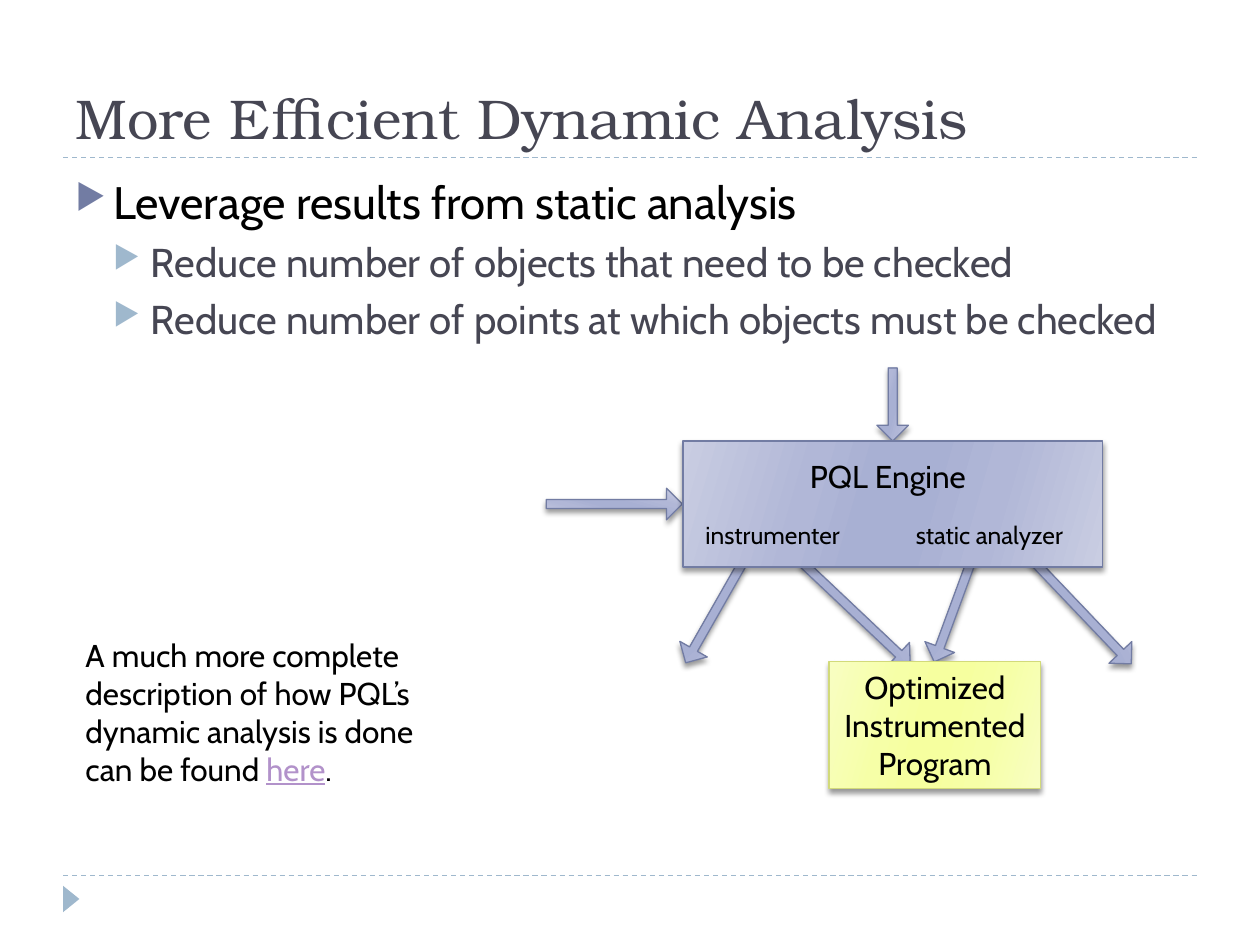
"""Build the slide on more efficient dynamic analysis with the PQL engine diagram."""
import pptx
import pptx.dml.color
import pptx.enum.dml
import pptx.enum.shapes
import pptx.enum.text
import pptx.oxml
import pptx.oxml.ns
import pptx.util

PX = 9144
COLORS = {
    "ink": "000000", "slate": "464653", "indigo": "727CA3",
    "sky": "9FB8CD", "olive": "D2DA7A", "link": "B292CA",
}
BLUES = ["C9CDE2", "B1B7D7", "A8B0D3"]
YELLOWS = ["F8FEC2", "F6FFA7", "F6FF9F"]
KINDS = pptx.enum.shapes.MSO_SHAPE
ALIGN = pptx.enum.text.PP_ALIGN
NAMESPACE = pptx.oxml.ns.nsdecls("a")


def add_span(para, text, size, color="ink", font="Cabin"):
    span = para.add_run()
    span.text = text
    span.font.size = pptx.util.Pt(size)
    span.font.name = font
    span.font.color.rgb = pptx.dml.color.RGBColor.from_string(COLORS[color])
    return span


def add_block(kind, bounds, shades, edge):
    block = page.shapes.add_shape(kind, *[value * PX for value in bounds])
    block.line.color.rgb = pptx.dml.color.RGBColor.from_string(COLORS[edge])
    block.line.width = pptx.util.Pt(0.75)
    block.fill.solid()
    stops = "".join(
        f'<a:gs pos="{position * 1000}"><a:srgbClr val="{shade}"/></a:gs>'
        for position, shade in zip((0, 30, 45, 55, 73, 100), shades + shades[::-1])
    )
    solid = block.fill._xPr.find(pptx.oxml.ns.qn("a:solidFill"))
    solid.getparent().replace(solid, pptx.oxml.parse_xml(
        f'<a:gradFill {NAMESPACE} rotWithShape="1"><a:gsLst>{stops}</a:gsLst>'
        '<a:lin ang="960000" scaled="0"/></a:gradFill>'))
    block.shadow.inherit = False
    block._element.spPr.find(pptx.oxml.ns.qn("a:effectLst")).append(pptx.oxml.parse_xml(
        f'<a:outerShdw {NAMESPACE} blurRad="38100" dist="25400" dir="5400000" rotWithShape="0">'
        '<a:srgbClr val="000000"><a:alpha val="40000"/></a:srgbClr></a:outerShdw>'))
    return block


deck = pptx.Presentation()
deck.slide_width, deck.slide_height = 1000 * PX, 750 * PX
page = deck.slides.add_slide(deck.slide_layouts[5])

for height in (695, 125):
    rule = page.shapes.add_connector(
        pptx.enum.shapes.MSO_CONNECTOR.STRAIGHT, 50 * PX, height * PX, 950 * PX, height * PX)
    rule.line.color.rgb = pptx.dml.color.RGBColor.from_string(COLORS["sky"])
    rule.line.width = pptx.util.Pt(0.75)
    rule.line.dash_style = pptx.enum.dml.MSO_LINE.DASH
    rule._element.spPr.append(pptx.oxml.parse_xml(f"<a:effectLst {NAMESPACE}/>"))

marker = page.shapes.add_shape(KINDS.ISOSCELES_TRIANGLE, 46 * PX, 707 * PX, 21 * PX, 13 * PX)
marker.rotation = 90
marker.shadow.inherit = False
marker.fill.solid()
marker.fill.fore_color.rgb = pptx.dml.color.RGBColor.from_string(COLORS["sky"])
marker.line.fill.background()

title = page.shapes.title
title.left, title.top, title.width, title.height = 50 * PX, 17 * PX, 900 * PX, 108 * PX
title.text_frame.auto_size = pptx.enum.text.MSO_AUTO_SIZE.NONE
title.text_frame.vertical_anchor = pptx.enum.text.MSO_ANCHOR.BOTTOM
para = title.text_frame.paragraphs[0]
para.alignment = ALIGN.LEFT
add_span(para, "More Efficient Dynamic Analysis", 32, "slate", "TeX Gyre Bonum")

body = page.shapes.add_textbox(50 * PX, 133 * PX, 900 * PX, 200 * PX)
body.text_frame.word_wrap = True
points = [
    (0, "Leverage results from static analysis"),
    (1, "Reduce number of objects that need to be checked"),
    (1, "Reduce number of points at which objects must be checked"),
]
levels = [(26, "ink", "indigo", 6), (23, "slate", "sky", 5)]
for index, (level, text) in enumerate(points):
    size, color, bullet, space = levels[level]
    para = body.text_frame.add_paragraph() if index else body.text_frame.paragraphs[0]
    para.level = level
    para.space_before = pptx.util.Pt(space)
    add_span(para, text, size, color)
    settings = para._p.get_or_add_pPr()
    settings.set("marL", str((level + 1) * 30 * PX))
    settings.set("indent", str(-30 * PX))
    for markup in (
        f'<a:buClr {NAMESPACE}><a:srgbClr val="{COLORS[bullet]}"/></a:buClr>',
        f'<a:buSzPct {NAMESPACE} val="76000"/>',
        f'<a:buChar {NAMESPACE} char="▶"/>',
    ):
        settings.append(pptx.oxml.parse_xml(markup))

arrows = [
    ((696, 292, 25, 58), 0),
    ((475, 346, 25, 108), 270),
    ((554, 442, 25, 90), 29.7),
    ((845, 426, 25, 117), 316.4),
    ((667, 428, 25, 118), 313.4),
    ((744, 441, 25, 87), 20.2),
]
for bounds, angle in arrows:
    arrow = add_block(KINDS.DOWN_ARROW, bounds, BLUES, "indigo")
    arrow.rotation = angle
    arrow.adjustments[0] = 0.288
    arrow.adjustments[1] = 0.5

add_block(KINDS.RECTANGLE, (542, 350, 333, 100), BLUES, "indigo")
program = add_block(KINDS.RECTANGLE, (658, 525, 168, 101), YELLOWS, "olive")
program.text_frame.word_wrap = False
for index, text in enumerate(("Optimized", "Instrumented", "Program")):
    para = program.text_frame.add_paragraph() if index else program.text_frame.paragraphs[0]
    para.alignment = ALIGN.CENTER
    add_span(para, text, 18)

labels = [
    ((550, 408, 129, 34), 14, False, ["instrumenter"]),
    ((717, 408, 150, 34), 14, True, ["static analyzer"]),
    ((633, 358, 155, 40), 18, False, ["PQL Engine"]),
    ((58, 500, 375, 131), 18, True, [
        "A much more complete", "description of how PQL’s",
        "dynamic analysis is done", "can be found "]),
]
for bounds, size, wrap, lines in labels:
    box = page.shapes.add_textbox(*[value * PX for value in bounds])
    box.text_frame.word_wrap = wrap
    box.text_frame.auto_size = pptx.enum.text.MSO_AUTO_SIZE.SHAPE_TO_FIT_TEXT
    for index, text in enumerate(lines):
        para = box.text_frame.add_paragraph() if index else box.text_frame.paragraphs[0]
        add_span(para, text, size)
add_span(para, "here", 18, "link").font.underline = True
add_span(para, ".", 18)

deck.save("out.pptx")
